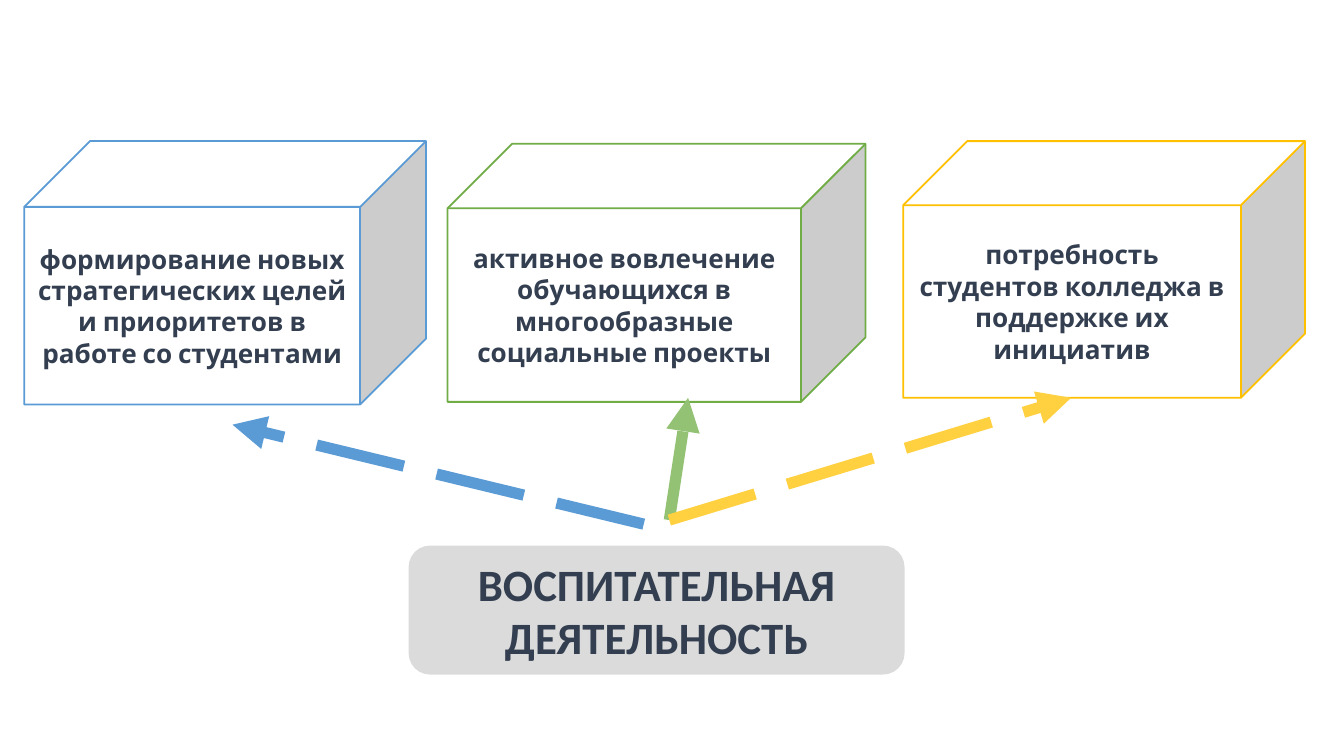
from pptx import Presentation
from pptx.dml.color import RGBColor
from pptx.enum import dml, shapes, text
from pptx.oxml.ns import qn
from pptx.util import Pt
from lxml import etree

PX = 4572  # 200 px to the inch
INK = "333F50"

# left, top, width, height, outline, wording
CUBES = [
    (666, 214, 622, 384, "70AD47",
     "активное вовлечение обучающихся в многообразные социальные проекты"),
    (1344, 210, 598, 382, "FFC000",
     "потребность студентов колледжа в поддержке их инициатив"),
    (36, 210, 598, 392, "5B9BD5",
     "формирование новых стратегических целей и приоритетов в работе со студентами"),
]
# start, end, colour
ARROWS = [
    ((958, 780), (346, 632), "5B9BD5"),
    ((996, 774), (1024, 592), "94C275"),
    ((996, 774), (1594, 592), "FFD040"),
]


def px(*lengths):
    return [length * PX for length in lengths]


def colour(value):
    return RGBColor.from_string(value)


def add_box(page, kind, place, fill, outline, wording, font, size):
    box = page.shapes.add_shape(kind, *px(*place))
    box.shadow.inherit = False
    box.fill.solid()
    box.fill.fore_color.rgb = colour(fill)
    if outline:
        box.line.color.rgb = colour(outline)
        box.line.width = Pt(1)
    else:
        box.line.fill.background()

    frame = box.text_frame
    frame.text = wording
    frame.word_wrap = True
    frame.vertical_anchor = text.MSO_ANCHOR.MIDDLE
    frame.margin_left, frame.margin_right = px(15, 15)
    frame.margin_top, frame.margin_bottom = px(8, 8)
    para = frame.paragraphs[0]
    para.alignment = text.PP_ALIGN.CENTER
    span = para.runs[0]
    span.font.name = font
    span.font.size = Pt(size)
    span.font.bold = True
    span.font.color.rgb = colour(INK)


def add_arrow(page, start, end, shade):
    arrow = page.shapes.add_connector(
        shapes.MSO_CONNECTOR.STRAIGHT, *px(*start, *end))
    arrow.line.color.rgb = colour(shade)
    arrow.line.width = Pt(6)
    arrow.line.dash_style = dml.MSO_LINE.LONG_DASH
    properties = arrow.element.spPr
    etree.SubElement(properties.find(qn("a:ln")), qn("a:tailEnd"), type="triangle")
    etree.SubElement(properties, qn("a:effectLst"))


def main():
    deck = Presentation()
    deck.slide_width, deck.slide_height = px(2000, 1125)
    page = deck.slides.add_slide(deck.slide_layouts[6])
    for *place, outline, wording in CUBES:
        add_box(page, shapes.MSO_SHAPE.CUBE, place, "FFFFFF", outline,
                wording, "Cabin", 14)
    for start, end, shade in ARROWS:
        add_arrow(page, start, end, shade)
    add_box(page, shapes.MSO_SHAPE.ROUNDED_RECTANGLE, (608, 812, 738, 192),
            "DBDBDB", None, "ВОСПИТАТЕЛЬНАЯ ДЕЯТЕЛЬНОСТЬ", "Calibri", 24)
    deck.save("out.pptx")


if __name__ == "__main__":
    main()
